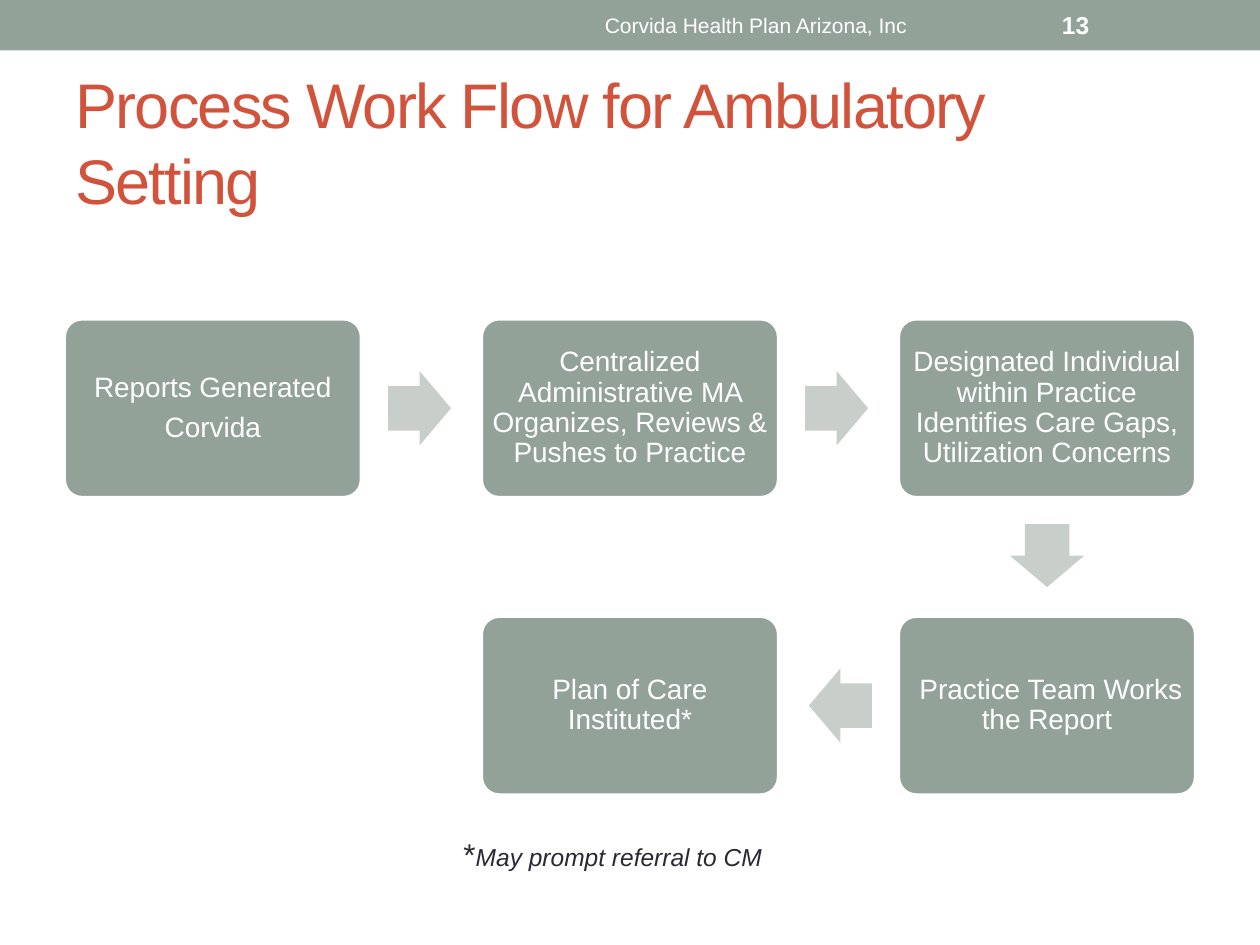
from pptx import Presentation
from pptx.dml.color import RGBColor
from pptx.enum.shapes import MSO_SHAPE
from pptx.enum.text import MSO_ANCHOR, PP_ALIGN
from pptx.util import Inches, Pt

RECT = MSO_SHAPE.RECTANGLE
ROUNDED = MSO_SHAPE.ROUNDED_RECTANGLE
ARROW = MSO_SHAPE.RIGHT_ARROW
MIDDLE, TOP = MSO_ANCHOR.MIDDLE, MSO_ANCHOR.TOP
LEFT, CENTER = PP_ALIGN.LEFT, PP_ALIGN.CENTER

FONT = "Arial"
COLORS = {
    "sage": "93A299",
    "pale": "C8CECA",
    "title": "D2533C",
    "dark": "292934",
    "white": "FFFFFF",
}

GRID_LEFT, GRID_TOP = 0.51, 2.53
COL_STEP, ROW_STEP = 3.31, 2.36
BOX_W, BOX_H = 2.36, 1.42
ARROW_W, ARROW_H = 0.5, 0.59
ARROW_GAP = 0.21

STEPS = [
    (0, 0, "Reports Generated\nCorvida"),
    (1, 0, "Centralized Administrative MA Organizes, Reviews & Pushes to Practice"),
    (2, 0, "Designated Individual within Practice Identifies Care Gaps, Utilization Concerns"),
    (2, 1, " Practice Team Works the Report"),
    (1, 1, "Plan of Care Instituted*"),
]
ROTATIONS = {(1, 0): 0, (0, 1): 90, (-1, 0): 180}


def rgb(name):
    return RGBColor.from_string(COLORS[name])


def style_run(r, size, color, bold=False, italic=False):
    r.font.name = FONT
    r.font.size = Pt(size)
    r.font.color.rgb = rgb(color)
    r.font.bold = bold
    r.font.italic = italic


def add_block(s, kind, x, y, w, h, fill):
    sp = s.shapes.add_shape(kind, Inches(x), Inches(y), Inches(w), Inches(h))
    sp.shadow.inherit = False
    sp.fill.solid()
    sp.fill.fore_color.rgb = rgb(fill)
    sp.line.fill.background()
    return sp


def add_label(s, x, y, w, h, text, size, color, align=LEFT, anchor=MIDDLE,
              wrap=True, bold=False):
    sp = s.shapes.add_textbox(Inches(x), Inches(y), Inches(w), Inches(h))
    tf = sp.text_frame
    tf.word_wrap = wrap
    tf.vertical_anchor = anchor
    p = tf.paragraphs[0]
    p.text = text
    p.alignment = align
    style_run(p.runs[0], size, color, bold)
    return p


def add_step(s, col, row, text):
    sp = add_block(s, ROUNDED, GRID_LEFT + col * COL_STEP,
                   GRID_TOP + row * ROW_STEP, BOX_W, BOX_H, "sage")
    sp.adjustments[0] = 0.1
    sp.line.color.rgb = rgb("white")
    sp.line.width = Pt(2.08)
    tf = sp.text_frame
    tf.text = text
    tf.word_wrap = True
    tf.vertical_anchor = MIDDLE
    tf.margin_left = tf.margin_right = Inches(0.03)
    tf.margin_top = tf.margin_bottom = Inches(0.03)
    for p in tf.paragraphs:
        p.alignment = CENTER
        p.line_spacing = 0.9
        p.space_after = Pt(5.6)
        style_run(p.runs[0], 16, "white")


def add_flow_arrow(s, start, end):
    dx, dy = end[0] - start[0], end[1] - start[1]
    offset = ARROW_GAP + ARROW_W / 2
    cx = GRID_LEFT + start[0] * COL_STEP + BOX_W / 2 + dx * (BOX_W / 2 + offset)
    cy = GRID_TOP + start[1] * ROW_STEP + BOX_H / 2 + dy * (BOX_H / 2 + offset)
    sp = add_block(s, ARROW, cx - ARROW_W / 2, cy - ARROW_H / 2,
                   ARROW_W, ARROW_H, "pale")
    sp.adjustments[0] = 0.6
    sp.adjustments[1] = 0.5
    sp.rotation = ROTATIONS[dx, dy]


def main():
    prs = Presentation()
    prs.slide_width, prs.slide_height = Inches(10), Inches(7.5)
    s = prs.slides.add_slide(prs.slide_layouts[6])

    add_block(s, RECT, 0, 0, 10, 0.4, "sage")
    title = add_label(s, 0.5, 0.58, 9, 1.08,
                      "Process Work Flow for Ambulatory Setting", 36, "title")
    title.runs[0].font._element.set("spc", "-100")

    for step in STEPS:
        add_step(s, *step)
    for start, end in zip(STEPS, STEPS[1:]):
        add_flow_arrow(s, start, end)

    note = add_label(s, 3.58, 6.58, 2.64, 0.4, "*", 18, "dark",
                     anchor=TOP, wrap=False)
    r = note.add_run()
    r.text = "May prompt referral to CM"
    style_run(r, 14, "dark", italic=True)

    add_label(s, 8.33, 0.02, 1.17, 0.36, "13", 14, "white", bold=True)
    add_label(s, 3.75, 0.02, 4.5, 0.36, "Corvida Health Plan Arizona, Inc",
              12, "white", align=CENTER)

    prs.save("out.pptx")


if __name__ == "__main__":
    main()
